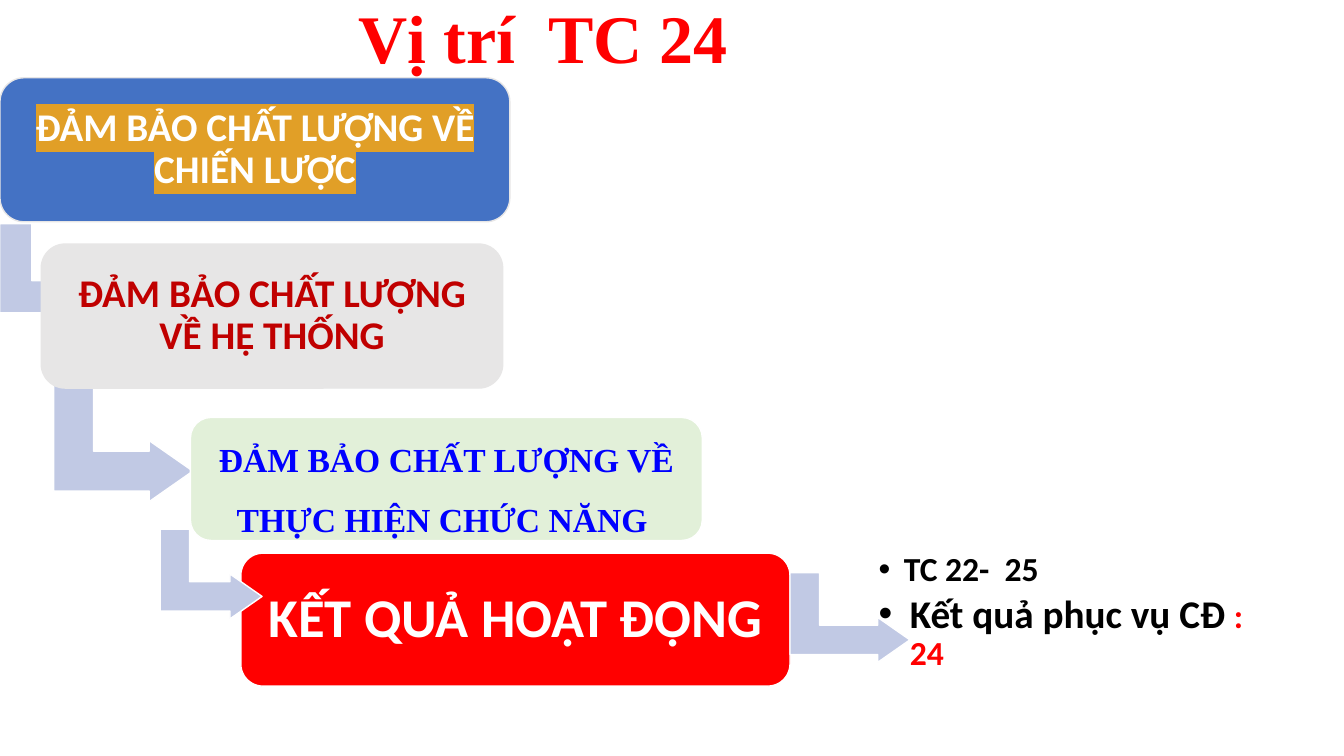
from lxml import etree
from pptx import Presentation
from pptx.dml import color
from pptx.enum import shapes, text
from pptx.oxml import ns
from pptx.util import Cm, Pt

ARROW_FILL = "C1C9E4"
WHITE = "FFFFFF"
RED = "FF0000"


def rgb(value):
    return color.RGBColor.from_string(value)


def set_font(font, name, size, colour):
    font.name = name
    font.size = Pt(size)
    font.bold = True
    font.color.rgb = rgb(colour)


def place(shape, left, top, width, height):
    shape.left, shape.top = Cm(left), Cm(top)
    shape.width, shape.height = Cm(width), Cm(height)


def set_frame(frame, margin):
    frame.word_wrap = True
    frame.auto_size = text.MSO_AUTO_SIZE.NONE
    frame.vertical_anchor = text.MSO_ANCHOR.MIDDLE
    frame.margin_left = frame.margin_right = Cm(margin)
    frame.margin_top = frame.margin_bottom = Cm(margin)


def add_filled_shape(slide, kind, position, fill, line):
    shape = slide.shapes.add_shape(kind, *(Cm(length) for length in position))
    shape.shadow.inherit = False
    shape.fill.solid()
    shape.fill.fore_color.rgb = rgb(fill)
    shape.line.color.rgb = rgb(line)
    shape.line.width = Pt(1)
    return shape


def add_step(slide, position, fill, line, wording, size, colour,
             font="Calibri", margin=0.3, spacing=0.9):
    shape = add_filled_shape(slide, shapes.MSO_SHAPE.ROUNDED_RECTANGLE,
                             position, fill, line)
    set_frame(shape.text_frame, margin)
    paragraph = shape.text_frame.paragraphs[0]
    paragraph.alignment = text.PP_ALIGN.CENTER
    paragraph.line_spacing = spacing
    paragraph.add_run().text = wording
    set_font(paragraph.font, font, size, colour)
    return shape


def add_arrow(slide, *position):
    arrow = add_filled_shape(slide, shapes.MSO_SHAPE.BENT_UP_ARROW,
                             position, ARROW_FILL, WHITE)
    arrow.rotation = 90
    for index, value in enumerate((0.328, 0.25, 0.358)):
        arrow.adjustments[index] = value


def highlight(run, colour):
    mark = etree.SubElement(run.font._element, ns.qn("a:highlight"))
    etree.SubElement(mark, ns.qn("a:srgbClr"), val=colour)


def format_bullet(paragraph, indent):
    paragraph.line_spacing = 0.9
    paragraph.space_before = Pt(0)
    paragraph.space_after = Pt(4)
    properties = paragraph._p.get_or_add_pPr()
    properties.set("marL", str(Cm(indent)))
    properties.set("indent", str(-Cm(indent)))
    bullet = etree.Element(ns.qn("a:buChar"), char="•")
    defaults = properties.find(ns.qn("a:defRPr"))
    if defaults is None:
        properties.append(bullet)
    else:
        defaults.addprevious(bullet)


def fill_title(title):
    place(title, 8.79, 0, 13.49, 2.08)
    set_frame(title.text_frame, 0.25)
    title.text_frame.text = "Vị trí  TC 24"
    paragraph = title.text_frame.paragraphs[0]
    paragraph.alignment = text.PP_ALIGN.LEFT
    paragraph.line_spacing = 0.9
    set_font(paragraph.font, "Times New Roman", 48.6, RED)


def fill_results(body):
    place(body, 21.89, 13.44, 9.83, 4.01)
    frame = body.text_frame
    set_frame(frame, 0.25)
    criteria = frame.paragraphs[0]
    criteria.add_run().text = "TC 22-  25"
    set_font(criteria.font, "Calibri", 24, "000000")
    format_bullet(criteria, 0.64)

    community = frame.add_paragraph()
    for wording, size, colour in (("Kết quả phục vụ CĐ ", 28, "000000"),
                                  (": 24", 24, RED)):
        run = community.add_run()
        run.text = wording
        set_font(run.font, "Calibri", size, colour)
    format_bullet(community, 0.79)


def main():
    presentation = Presentation()
    presentation.slide_width, presentation.slide_height = Cm(33.87), Cm(19.05)
    slide = presentation.slides.add_slide(presentation.slide_layouts[1])

    # Title and list of results
    fill_title(slide.shapes.title)
    fill_results(slide.placeholders[1])

    # Descending steps, with the arrows that lead to them
    add_arrow(slide, 0.91, 4.72, 2.46, 4.29)
    strategy = add_step(slide, (0, 1.96, 12.85, 3.63), "4472C4", "E7E6E6",
                        "ĐẢM BẢO CHẤT LƯỢNG VỀ CHIẾN LƯỢC", 28, WHITE)
    highlight(strategy.text_frame.paragraphs[0].runs[0], "E19F27")
    add_arrow(slide, 1.57, 9.35, 3.07, 3.51)
    add_step(slide, (1.04, 6.15, 11.63, 3.63), "E7E6E6", "E7E6E6",
             "ĐẢM BẢO CHẤT LƯỢNG VỀ HỆ THỐNG", 28, "C00000")
    add_step(slide, (4.8, 10.52, 12.9, 3.1), "E2F0D9", WHITE,
             "ĐẢM BẢO CHẤT LƯỢNG VỀ THỰC HIỆN CHỨC NĂNG ", 24, "0000FF",
             font="Times New Roman", margin=0.25, spacing=1.5)
    add_step(slide, (6.07, 13.94, 13.84, 3.35), RED, WHITE,
             "KẾT QUẢ HOẠT ĐỘNG", 39, WHITE, margin=0.4)
    add_arrow(slide, 4.19, 13.18, 2.26, 2.57)
    add_arrow(slide, 20.29, 14.05, 2.26, 3.02)

    presentation.save("out.pptx")


if __name__ == "__main__":
    main()
